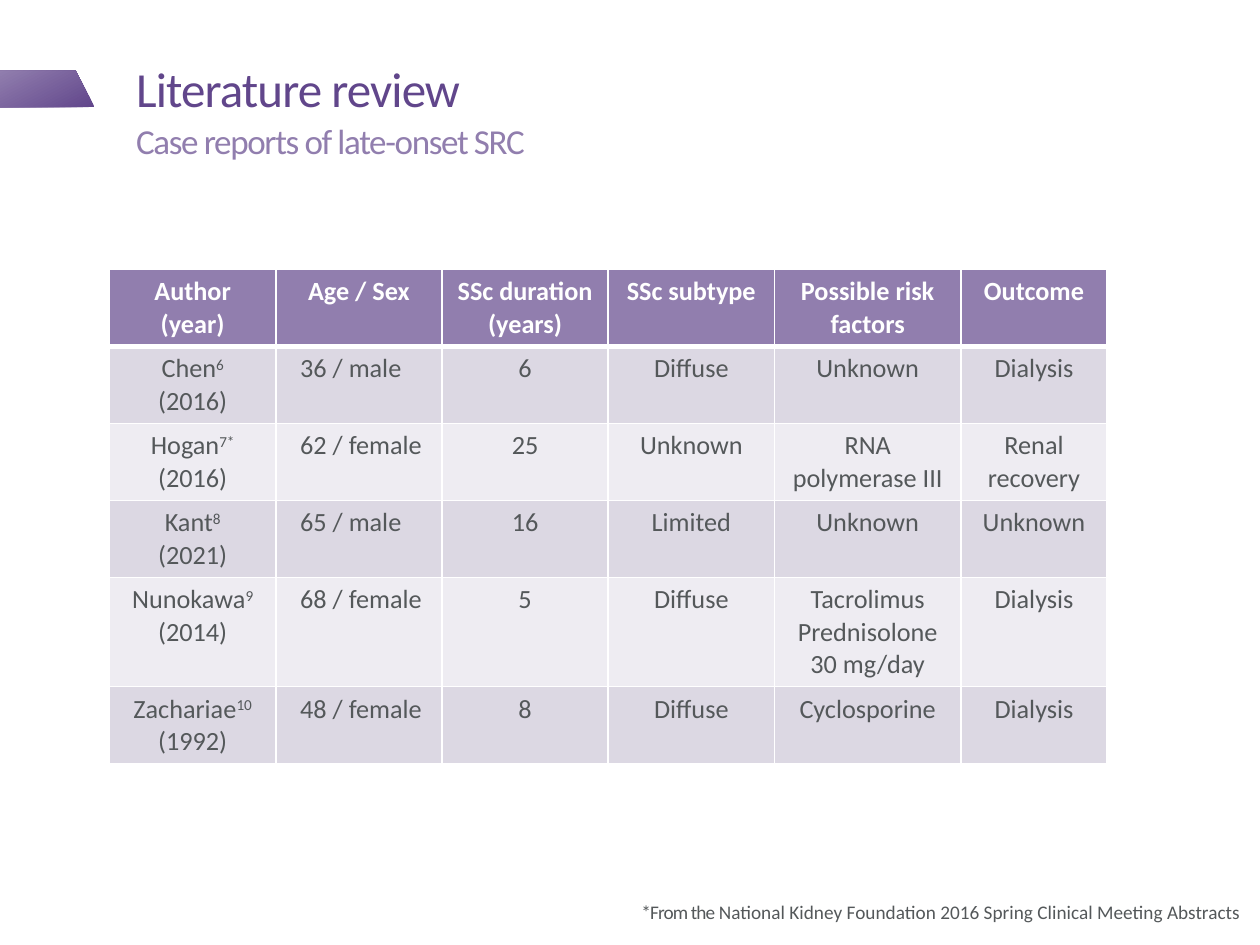
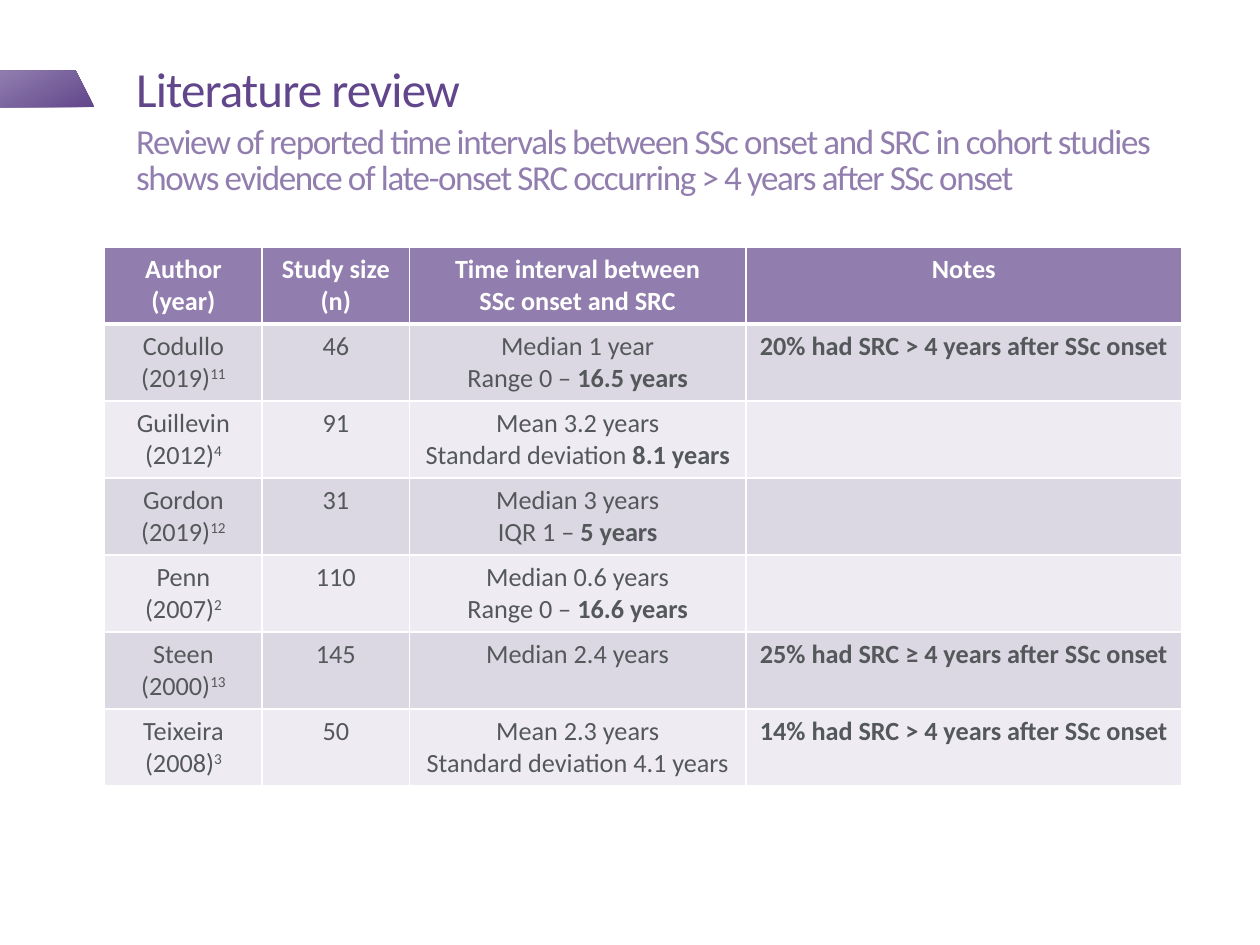
from lxml import etree
from pptx import Presentation
from pptx.dml.color import RGBColor
from pptx.enum import text
from pptx.oxml import ns
from pptx.util import Pt

PURPLE, LILAC, GREY, WHITE = "61468B", "917EAE", "54585A", "FFFFFF"
BAND_FILLS = ["EEECF2", "DCD8E3"]
ROW_HEIGHT = 44
rgb = RGBColor.from_string


def style_run(run, size, color, bold=False, spacing=0, raised=False):
    run.font.name = "Calibri"
    run.font.size = Pt(size)
    run.font.bold = bold
    run.font.color.rgb = rgb(color)
    properties = run._r.get_or_add_rPr()
    if spacing:
        properties.set("spc", str(round(spacing * 100)))
    if raised:
        properties.set("baseline", "30000")


def add_borders(cell, top, bottom):
    properties = cell._tc.get_or_add_tcPr()
    for index, (side, width) in enumerate(
            [("L", 1), ("R", 1), ("T", top), ("B", bottom)]):
        line = etree.Element(ns.qn(f"a:ln{side}"), w=str(Pt(width)))
        fill = etree.SubElement(line, ns.qn("a:solidFill"))
        etree.SubElement(fill, ns.qn("a:srgbClr"), val=WHITE)
        properties.insert(index, line)


# Cell text: "|" separates runs, a leading "^" raises a run, "!" makes it bold
pages = [
    {
        "subtitle": "Case reports of late-onset SRC",
        "subtitle_size": (540, 36),
        "table_at": (62.6, 154.1),
        "widths": [95, 95, 95, 95, 106.6, 83.5],
        "tall_rows": {4: 62},
        "left_column": 1,
        "rows": [
            ["Author (year)", "Age / Sex", "SSc duration (years)", "SSc subtype",
             "Possible risk factors", "Outcome"],
            ["Chen|^6\n(2016)", "36 / male", "6", "Diffuse", "Unknown", "Dialysis"],
            ["Hogan|^7*\n(2016)", "62 / female", "25", "Unknown",
             "RNA polymerase III", "Renal recovery"],
            ["Kant|^8\n(2021)", "65 / male", "16", "Limited", "Unknown", "Unknown"],
            ["Nunokawa|^9\n(2014)", "68 / female", "5", "Diffuse",
             "Tacrolimus\nPrednisolone 30 mg/day", "Dialysis"],
            ["Zachariae|^10| (1992)", "48 / female", "8", "Diffuse",
             "Cyclosporine", "Dialysis"],
        ],
        "footnote": ["*From the ",
                     "National Kidney Foundation 2016 Spring Clinical Meeting Abstracts"],
    },
    {
        "subtitle": "Review of reported time intervals between SSc onset and SRC in "
                    "cohort studies shows evidence of late-onset SRC occurring "
                    "> 4 years after SSc onset",
        "subtitle_size": (607.7, 66.2),
        "table_at": (59.8, 141.1),
        "widths": [90, 84.2, 192.2, 249.1],
        "tall_rows": {},
        "left_column": None,
        "rows": [
            ["Author (year)", "Study size (n)",
             "Time interval between\nSSc onset and SRC", "Notes"],
            ["Codullo (2019)|^11", "46", "Median 1 year\nRange 0 – |!16.5 years",
             "!20% had SRC > 4 years after SSc onset"],
            ["Guillevin (2012)|^4", "91",
             "Mean 3.2 years\nStandard deviation |!8.1 years", ""],
            ["Gordon (2019)|^12", "31", "Median 3 years\nIQR 1 – |!5 years", ""],
            ["Penn (2007)|^2", "110", "Median 0.6 years\nRange 0 – |!16.6 years", ""],
            ["Steen (2000)|^13", "145", "Median 2.4 years",
             "!25% had SRC ≥ 4 years after SSc onset"],
            ["Teixeira (2008)|^3", "50", "Mean 2.3 years\nStandard deviation 4.1 years",
             "!14% had SRC > 4 years after SSc onset"],
        ],
        "footnote": [],
    },
]

presentation = Presentation()
presentation.slide_width, presentation.slide_height = Pt(720), Pt(540)

for page in pages:
    slide = presentation.slides.add_slide(presentation.slide_layouts[1])

    # Side band
    builder = slide.shapes.build_freeform(0, Pt(40.3))
    builder.add_line_segments(
        [(Pt(43.2), Pt(40.3)), (Pt(54), Pt(61.2)), (0, Pt(61.2))])
    band = builder.convert_to_shape()
    band.shadow.inherit = False
    band.line.fill.background()
    band.fill.gradient()
    band.fill.gradient_angle = 118
    for stop, color in zip(band.fill.gradient_stops, [PURPLE, LILAC]):
        stop.color.rgb = rgb(color)

    # Title and subtitle
    headings = [
        (slide.shapes.title, "Literature review", 10.8, (607.7, 59.8),
         text.MSO_ANCHOR.BOTTOM, 28, PURPLE, -0.5),
        (slide.placeholders[1], page["subtitle"], 72, page["subtitle_size"],
         text.MSO_ANCHOR.TOP, 20, LILAC, -0.8),
    ]
    for shape, words, top, (width, height), anchor, size, color, spacing in headings:
        shape.left, shape.top = Pt(77.8), Pt(top)
        shape.width, shape.height = Pt(width), Pt(height)
        frame = shape.text_frame
        frame.text = words
        frame.word_wrap = True
        frame.auto_size = text.MSO_AUTO_SIZE.NONE
        frame.vertical_anchor = anchor
        frame.margin_left = frame.margin_top = 0
        frame.margin_right, frame.margin_bottom = Pt(7.2), Pt(3.6)
        paragraph = frame.paragraphs[0]
        properties = paragraph._p.get_or_add_pPr()
        properties.set("marL", "0")
        properties.set("indent", "0")
        etree.SubElement(properties, ns.qn("a:buNone"))
        paragraph.alignment = text.PP_ALIGN.LEFT
        paragraph.line_spacing = 0.85
        paragraph.space_before = Pt(0)
        style_run(paragraph.runs[0], size, color, spacing=spacing)

    # Table
    rows, widths = page["rows"], page["widths"]
    heights = [page["tall_rows"].get(index, ROW_HEIGHT) for index in range(len(rows))]
    left, top = page["table_at"]
    table = slide.shapes.add_table(
        len(rows), len(widths), Pt(left), Pt(top),
        Pt(sum(widths)), Pt(sum(heights))).table
    for column, width in zip(table.columns, widths):
        column.width = Pt(width)
    for row_index, (row, height) in enumerate(zip(rows, heights)):
        table.rows[row_index].height = Pt(height)
        is_header = row_index == 0
        for column_index, content in enumerate(row):
            cell = table.cell(row_index, column_index)
            cell.fill.solid()
            cell.fill.fore_color.rgb = rgb(LILAC if is_header else BAND_FILLS[row_index % 2])
            add_borders(cell, 3 if row_index == 1 else 1, 3 if is_header else 1)
            alignment = text.PP_ALIGN.CENTER
            if column_index == page["left_column"] and not is_header:
                alignment = text.PP_ALIGN.LEFT
                cell.margin_left = Pt(14)
            cell.text_frame.text = content.replace("|", "")
            for paragraph, line in zip(cell.text_frame.paragraphs, content.split("\n")):
                paragraph.alignment = alignment
                paragraph.text = ""
                for part in filter(None, line.split("|")):
                    run = paragraph.add_run()
                    run.text = part.lstrip("^!")
                    style_run(run, 15, WHITE if is_header else GREY,
                              bold=is_header or part.startswith("!"),
                              raised=part.startswith("^"))

    # Footnote
    if page["footnote"]:
        frame = slide.shapes.add_textbox(
            Pt(366.5), Pt(516.2), Pt(353.5), Pt(14.4)).text_frame
        frame.word_wrap = True
        frame.margin_left = frame.margin_right = 0
        frame.margin_top = frame.margin_bottom = 0
        paragraph = frame.paragraphs[0]
        paragraph.line_spacing = 0.9
        for words, spacing in zip(page["footnote"], [-0.5, 0]):
            run = paragraph.add_run()
            run.text = words
            style_run(run, 11, GREY, spacing=spacing)

presentation.save("out.pptx")
